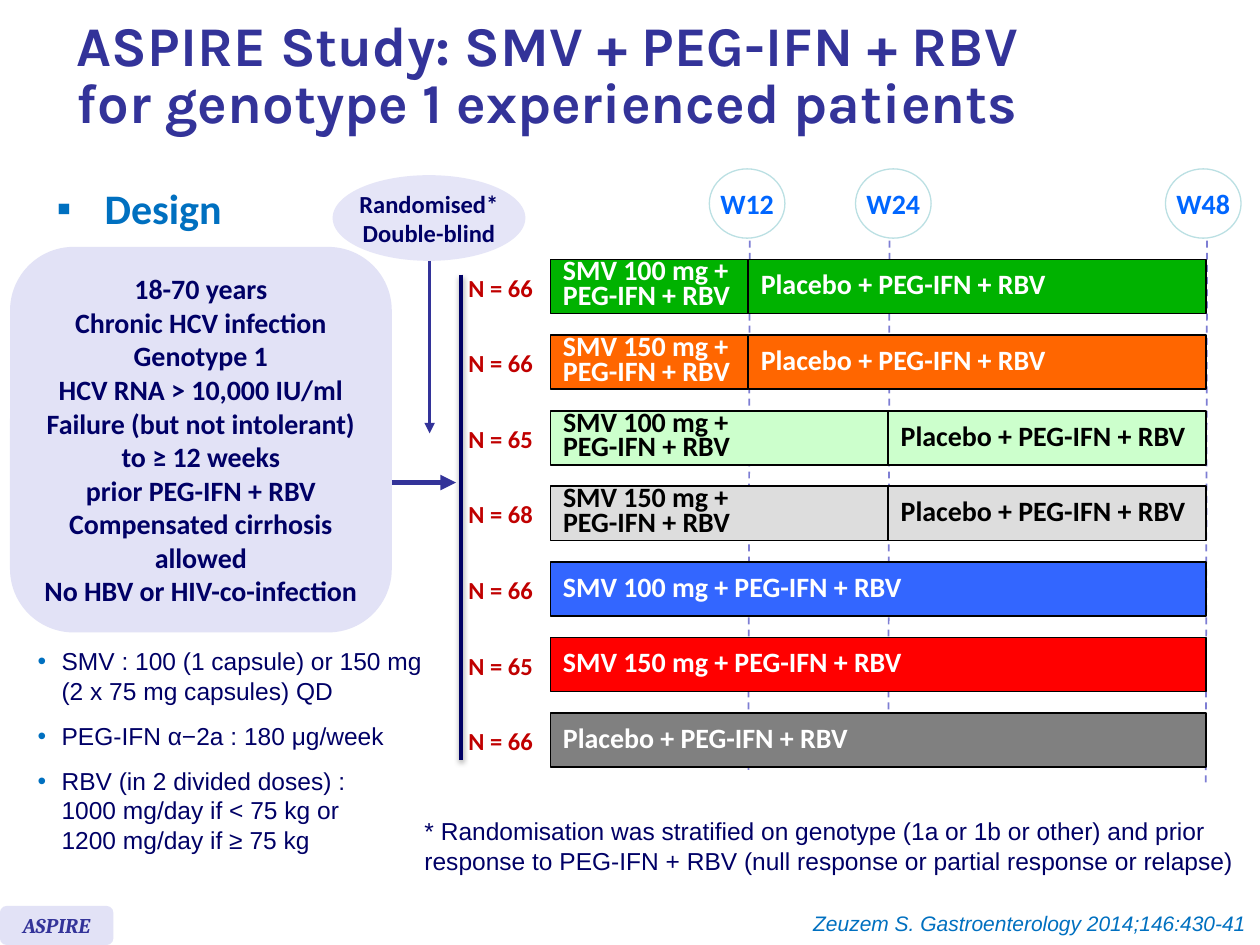
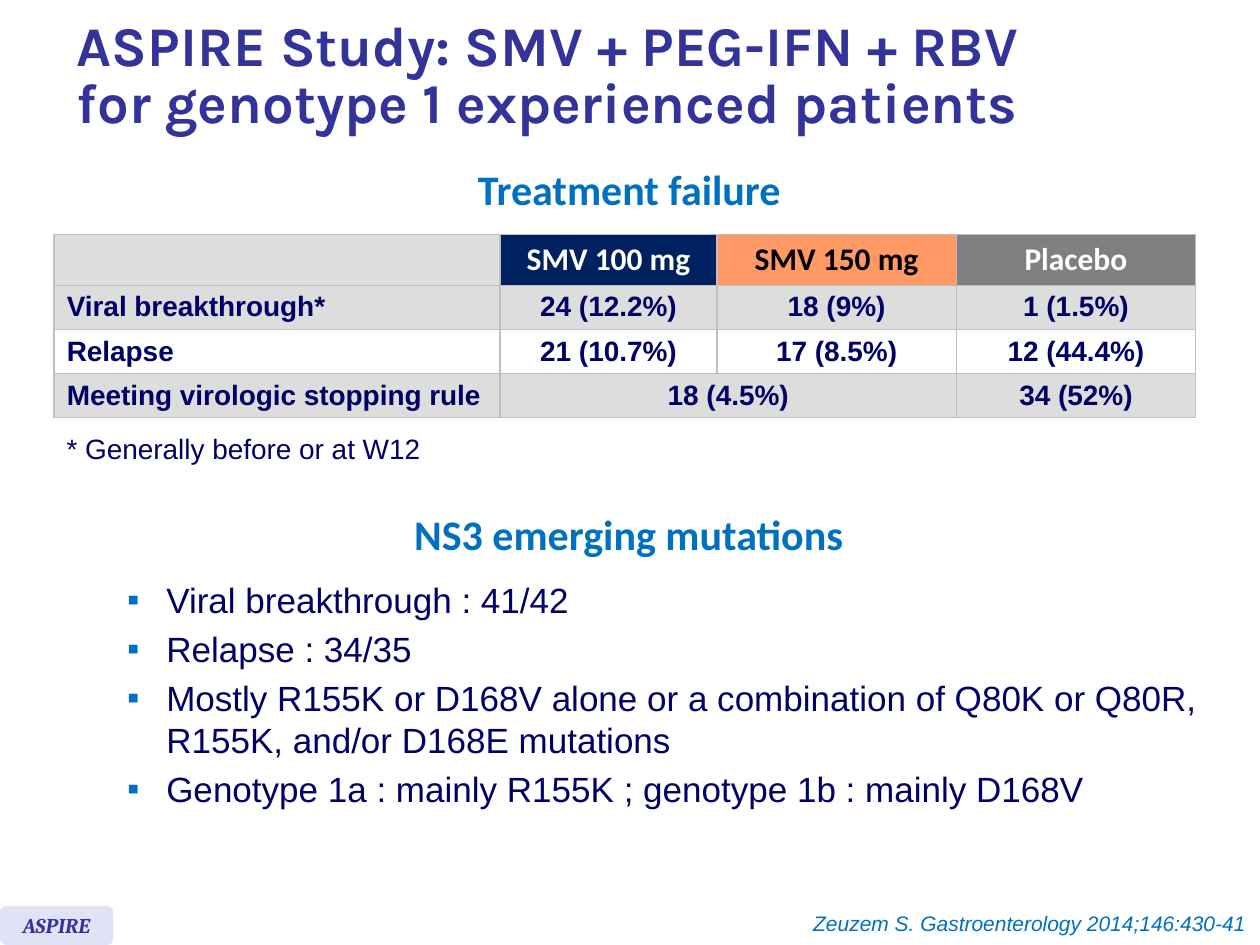
from copy import deepcopy

from lxml.etree import SubElement
from pptx import Presentation
from pptx.dml.color import RGBColor
from pptx.enum.dml import MSO_LINE
from pptx.enum.shapes import MSO_CONNECTOR, MSO_SHAPE as SHAPE
from pptx.enum.text import MSO_ANCHOR as ANCHOR, MSO_AUTO_SIZE, PP_ALIGN as ALIGN
from pptx.oxml.ns import qn
from pptx.util import Inches, Pt

# Colours
INDIGO = RGBColor(0x33, 0x33, 0x99)
NAVY = RGBColor(0x00, 0x00, 0x66)
DARK_NAVY = RGBColor(0x00, 0x20, 0x60)
SKY = RGBColor(0x00, 0x70, 0xC0)
WEEK_BLUE = RGBColor(0x00, 0x66, 0xFF)
WEEK_RIM = RGBColor(0xBB, 0xE0, 0xE3)
LAVENDER = RGBColor(0xE2, 0xE2, 0xF6)
PALE_LAVENDER = RGBColor(0xE5, 0xE5, 0xF7)
DASH_VIOLET = RGBColor(0x7E, 0x7E, 0xD4)
DARK_RED = RGBColor(0xC0, 0x00, 0x00)
GREEN = RGBColor(0x00, 0xB2, 0x00)
ORANGE = RGBColor(0xFF, 0x66, 0x00)
MINT = RGBColor(0xCC, 0xFF, 0xCC)
BLUE = RGBColor(0x33, 0x66, 0xFF)
RED = RGBColor(0xFF, 0x00, 0x00)
SALMON = RGBColor(0xFF, 0x99, 0x66)
LIGHT_GREY = RGBColor(0xDD, 0xDD, 0xDD)
BORDER_GREY = RGBColor(0xBF, 0xBF, 0xBF)
GREY = RGBColor(0x80, 0x80, 0x80)
BLACK = RGBColor(0, 0, 0)
WHITE = RGBColor(0xFF, 0xFF, 0xFF)


def type_style(name, size, **extra):
    return {"name": name, "size": Pt(size), "bold": False, "italic": False, **extra}


# Type styles
TITLE = type_style("Karla", 32, bold=True)
HEADING = type_style("Calibri", 24, bold=True)
TABLE_HEAD = type_style("Calibri", 18, bold=True)
LABEL = type_style("Calibri", 16, bold=True)
SMALL_LABEL = type_style("Calibri", 14, bold=True)
LIST = type_style("Arial", 20)
CELL = type_style("Arial", 16, bold=True)
FOOTNOTE = type_style("Arial", 16)
NOTE = type_style("Arial", 14)
CITATION = type_style("Arial", 12, italic=True)
TAG = type_style("Cambria", 12, bold=True, italic=True)


class Deck:
    def __init__(self):
        self.show = Presentation()
        self.show.slide_width, self.show.slide_height = Inches(10), Inches(7.5)
        self.page = None

    def set_text(self, frame, lines, style, ink, align=ALIGN.LEFT, spacing=None,
                 gap=0, bullet=None, indent=0, anchor=ANCHOR.TOP, wrap=True):
        for key, value in {"auto_size": MSO_AUTO_SIZE.NONE, "word_wrap": wrap,
                           "vertical_anchor": anchor}.items():
            setattr(frame, key, value)
        for index, line in enumerate(lines):
            para = frame.add_paragraph() if index else frame.paragraphs[0]
            if bullet:
                self.add_bullet(para, bullet, indent)
            para.text = line
            for key, value in {"alignment": align, "line_spacing": spacing,
                               "space_before": Pt(gap if index else 0)}.items():
                setattr(para, key, value)
            for span in para.runs:
                for key, value in style.items():
                    setattr(span.font, key, value)
                span.font.color.rgb = ink
            for line_break in para._p.findall(qn("a:br")):
                line_break.append(deepcopy(para.runs[0]._r.rPr))

    def add_bullet(self, para, mark, indent):
        props = para._p.get_or_add_pPr()
        props.set("marL", str(Inches(indent)))
        props.set("indent", str(-Inches(indent)))
        SubElement(SubElement(props, qn("a:buClr")), qn("a:srgbClr"), val=str(SKY))
        SubElement(props, qn("a:buFont"), typeface="Arial")
        SubElement(props, qn("a:buChar"), char=mark)

    def place(self, box, at):
        for key, value in zip(("left", "top", "width", "height"), at):
            setattr(box, key, Inches(value))

    def text(self, at, lines, style, ink, **layout):
        box = self.page.shapes.add_textbox(*map(Inches, at))
        self.set_text(box.text_frame, lines, style, ink, **layout)

    def body(self, at, lines, style, ink, **layout):
        box = self.page.placeholders[1]
        self.place(box, at)
        self.set_text(box.text_frame, lines, style, ink, bullet="▪", **layout)

    def shape(self, kind, at, fill, lines, style, ink, rim=None, rim_width=1, **layout):
        box = self.page.shapes.add_shape(kind, *map(Inches, at))
        box.shadow.inherit = False
        box.fill.solid()
        box.fill.fore_color.rgb = fill
        if rim is None:
            box.line.fill.background()
        else:
            box.line.color.rgb, box.line.width = rim, Pt(rim_width)
        self.set_text(box.text_frame, lines, style, ink, anchor=ANCHOR.MIDDLE, **layout)

    def line(self, start, end, color, width, dashed=False, arrow=False, shadow=False):
        line = self.page.shapes.add_connector(
            MSO_CONNECTOR.STRAIGHT, *map(Inches, start + end))
        line.line.color.rgb, line.line.width = color, Pt(width)
        if dashed:
            line.line.dash_style = MSO_LINE.DASH
        props = line._element.spPr
        if arrow:
            SubElement(props.find(qn("a:ln")), qn("a:tailEnd"), type="triangle")
        effects = SubElement(props, qn("a:effectLst"))
        if shadow:
            outer = SubElement(effects, qn("a:outerShdw"), blurRad=str(Pt(3.1)),
                               dist=str(Pt(1.6)), dir="5400000", rotWithShape="0")
            tint = SubElement(outer, qn("a:srgbClr"), val=str(BLACK))
            SubElement(tint, qn("a:alpha"), val="38000")

    def table(self, at, widths, heights):
        grid = self.page.shapes.add_table(
            len(heights), len(widths), *map(Inches, at)).table
        grid.first_row = grid.horz_banding = False
        for column, width in zip(grid.columns, widths):
            column.width = Inches(width)
        for row, height in zip(grid.rows, heights):
            row.height = Inches(height)
        return grid

    def cell(self, cell, text, fill, style, ink, align):
        cell.fill.solid()
        cell.fill.fore_color.rgb = fill
        if text:
            self.set_text(cell.text_frame, [text], style, ink, align=align)
        props = cell._tc.get_or_add_tcPr()
        for index, side in enumerate(("lnL", "lnR", "lnT", "lnB")):
            edge = SubElement(props, qn("a:" + side), w=str(Pt(1)))
            SubElement(SubElement(edge, qn("a:solidFill")), qn("a:srgbClr"),
                       val=str(BORDER_GREY))
            props.insert(index, edge)

    def new_page(self):
        self.page = self.show.slides.add_slide(self.show.slide_layouts[1])
        # Title, study tag and citation shared by every page
        title = self.page.shapes.title
        self.place(title, (0.51, 0.08, 9.13, 1.07))
        self.set_text(title.text_frame,
                      ["ASPIRE Study: SMV + PEG-IFN + RBV\nfor genotype 1 experienced patients"],
                      TITLE, INDIGO, spacing=0.85, anchor=ANCHOR.MIDDLE)
        self.shape(SHAPE.ROUNDED_RECTANGLE, (0, 7.19, 0.9, 0.31), LAVENDER,
                   ["ASPIRE"], TAG, INDIGO, align=ALIGN.CENTER, wrap=False)
        self.text((6.25, 7.18, 3.74, 0.3), ["Zeuzem S. Gastroenterology 2014;146:430-41"],
                  CITATION, SKY, align=ALIGN.RIGHT)


def design_page(deck):
    deck.new_page()
    deck.body((0.35, 1.4, 1.98, 0.63), ["Design"], HEADING, SKY, indent=0.38)

    # Week markers: name, line position, line end, circle left
    weeks = [("W12", 5.94, 6.11, 5.63), ("W24", 7.05, 6.03, 6.79), ("W48", 9.57, 6.21, 9.25)]
    for week, x, bottom, left in weeks:
        deck.line((x + 0.01, 1.91), (x, bottom), DASH_VIOLET, 1, dashed=True)
        deck.shape(SHAPE.OVAL, (left, 1.34, 0.6, 0.55), WHITE, [week], LABEL, WEEK_BLUE,
                   rim=WEEK_RIM, rim_width=0.75, align=ALIGN.CENTER, wrap=False)

    # Eligible patients and randomisation
    centred = {"align": ALIGN.CENTER, "wrap": False}
    deck.shape(SHAPE.ROUNDED_RECTANGLE, (0.08, 1.96, 3.03, 3.06), LAVENDER,
               ["18-70 years", "Chronic HCV infection", "Genotype 1",
                "HCV RNA > 10,000 IU/ml", "Failure (but not intolerant)",
                "to ≥ 12 weeks", "prior PEG-IFN + RBV", "Compensated cirrhosis",
                "allowed", "No HBV or HIV-co-infection"], LABEL, NAVY, **centred)
    deck.shape(SHAPE.OVAL, (2.64, 1.39, 1.53, 0.68), PALE_LAVENDER,
               ["Randomised*", "Double-blind"], SMALL_LABEL, NAVY, **centred)
    deck.line((3.11, 3.83), (3.62, 3.83), INDIGO, 3, arrow=True)
    deck.line((3.41, 2.07), (3.41, 3.44), INDIGO, 2, arrow=True)
    deck.line((3.66, 2.18), (3.66, 6.03), NAVY, 2, shadow=True)

    # Treatment arms: size, fill, text colour, first regimen, week of switch to placebo
    start, w12, w24, end = 4.37, 5.94, 7.05, 9.57
    low, high = ["SMV 100 mg +", "PEG-IFN + RBV"], ["SMV 150 mg +", "PEG-IFN + RBV"]
    placebo = ["Placebo + PEG-IFN + RBV"]
    arms = [
        (66, GREEN, WHITE, low, w12),
        (66, ORANGE, WHITE, high, w12),
        (65, MINT, BLACK, low, w24),
        (68, LIGHT_GREY, BLACK, high, w24),
        (66, BLUE, WHITE, [" ".join(low)], end),
        (65, RED, WHITE, [" ".join(high)], end),
        (66, GREY, WHITE, placebo, end),
    ]
    for index, (size, fill, ink, regimen, switch) in enumerate(arms):
        top = 2.06 + 0.6 * index
        deck.text((3.62, top, 0.77, 0.44), [f"N = {size}"], SMALL_LABEL, DARK_RED,
                  anchor=ANCHOR.MIDDLE)
        for left, right, lines in ((start, switch, regimen), (switch, end, placebo)):
            if left < right:
                deck.shape(SHAPE.RECTANGLE, (left, top, right - left, 0.43), fill, lines,
                           LABEL, ink, rim=BLACK, spacing=Pt(14 if len(lines) > 1 else 16))

    # Doses and footnote
    deck.text((0.2, 5.09, 3.39, 1.73),
              ["SMV : 100 (1 capsule) or 150 mg\n(2 x 75 mg capsules) QD",
               "PEG-IFN α−2a : 180 μg/week",
               "RBV (in 2 divided doses) :\n1000 mg/day if < 75 kg or\n1200 mg/day if ≥ 75 kg"],
              NOTE, NAVY, gap=9, bullet="•", indent=0.19, anchor=ANCHOR.MIDDLE)
    deck.text((3.27, 6.43, 6.69, 0.57),
              ["* Randomisation was stratified on genotype (1a or 1b or other) and prior "
               "response to PEG-IFN + RBV (null response or partial response or relapse)"],
              NOTE, NAVY)


def failure_page(deck):
    deck.new_page()
    heading = {"align": ALIGN.CENTER, "spacing": Pt(23.6)}

    # Treatment failure table
    deck.text((3.68, 1.32, 2.63, 0.44), ["Treatment failure"], HEADING, SKY, **heading)
    grid = deck.table((0.43, 1.86, 9.06, 1.45), (3.54, 1.72, 1.9, 1.9),
                      (0.4, 0.35, 0.35, 0.35))
    heads = [("", LIGHT_GREY, WHITE), ("SMV 100 mg", DARK_NAVY, WHITE),
             ("SMV 150 mg", SALMON, BLACK), ("Placebo", GREY, WHITE)]
    for column, (text, fill, ink) in enumerate(heads):
        deck.cell(grid.cell(0, column), text, fill, TABLE_HEAD, ink, ALIGN.CENTER)
    rows = [("Viral breakthrough*", "24 (12.2%)", "18 (9%)", "1 (1.5%)"),
            ("Relapse", "21 (10.7%)", "17 (8.5%)", "12 (44.4%)"),
            ("Meeting virologic stopping rule", "18 (4.5%)", "", "34 (52%)")]
    for row, values in enumerate(rows, 1):
        for column, text in enumerate(values):
            deck.cell(grid.cell(row, column), text, LIGHT_GREY if row % 2 else WHITE,
                      CELL, NAVY, ALIGN.CENTER if column else ALIGN.LEFT)
    grid.cell(3, 1).merge(grid.cell(3, 2))
    deck.text((0.43, 3.38, 3.3, 0.37), ["* Generally before or at W12"], FOOTNOTE, NAVY)

    # Mutations
    deck.text((3.15, 4.06, 3.68, 0.44), ["NS3 emerging mutations"], HEADING, SKY, **heading)
    deck.body((0.91, 4.54, 9.05, 2),
              ["Viral breakthrough : 41/42", "Relapse : 34/35",
               "Mostly R155K or D168V alone or a combination of Q80K or Q80R, "
               "R155K, and/or D168E mutations",
               "Genotype 1a : mainly R155K ; genotype 1b : mainly D168V"],
              LIST, NAVY, gap=4, indent=0.31)


def main():
    deck = Deck()
    design_page(deck)
    failure_page(deck)
    deck.show.save("out.pptx")


if __name__ == "__main__":
    main()
